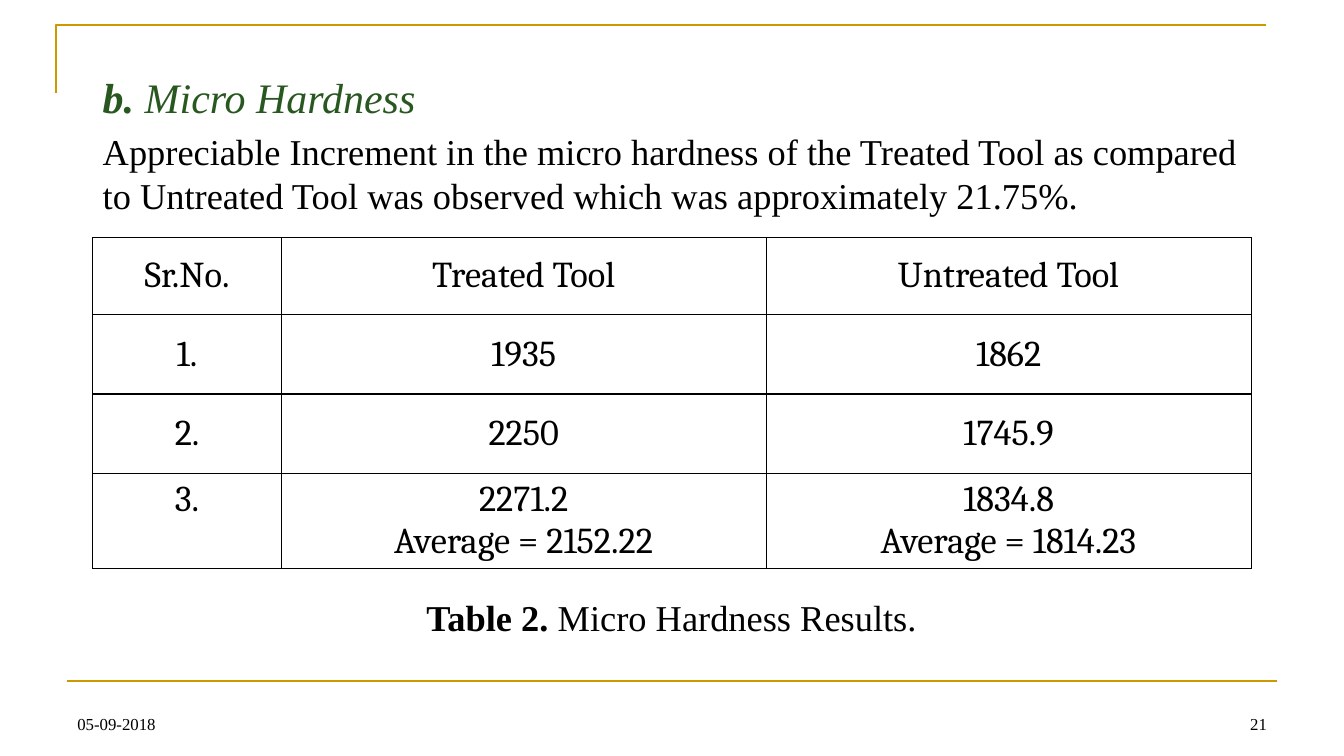
from dataclasses import dataclass

from lxml import etree
from pptx import Presentation
from pptx import util as u
from pptx.dml.color import RGBColor
from pptx.enum import shapes, text
from pptx.oxml import ns

GOLD = RGBColor(0xCC, 0x99, 0x00)
GREEN = RGBColor(0x28, 0x57, 0x20)
BLACK = RGBColor(0x00, 0x00, 0x00)
SERIF = "Times New Roman"
TABLE_FONT = "Cambria"
LEFT, CENTER, RIGHT = text.PP_ALIGN.LEFT, text.PP_ALIGN.CENTER, text.PP_ALIGN.RIGHT
TOP, MIDDLE, BOTTOM = text.MSO_ANCHOR.TOP, text.MSO_ANCHOR.MIDDLE, text.MSO_ANCHOR.BOTTOM

COLUMN_WIDTHS = (4.75, 12.22, 12.22)
ROW_HEIGHTS = (1.93, 2.01, 2.01, 2.39)
HARDNESS_ROWS = (
    ("Sr.No.", "Treated Tool", "Untreated Tool"),
    ("1.", "1935", "1862"),
    ("2.", "2250", "1745.9"),
    ("3.", "2271.2\nAverage = 2152.22", "1834.8\nAverage = 1814.23"),
)


@dataclass(frozen=True)
class Line:
    words: str
    size: float
    lead: str = ""
    color: RGBColor = BLACK
    italic: bool = False
    align: text.PP_ALIGN = LEFT
    space_before: float = 0


@dataclass(frozen=True)
class TextBlock:
    left: float
    top: float
    width: float
    height: float
    lines: tuple[Line, ...]
    anchor: text.MSO_ANCHOR = TOP
    wrap: bool = True


TEXT_BLOCKS = (
    TextBlock(2.34, 1.68, 29.21, 15.42, (
        Line("Micro Hardness", 30, "b. ", GREEN, italic=True, space_before=6),
        Line("Appreciable Increment in the micro hardness of the Treated Tool as compared "
             "to Untreated Tool was observed which was approximately 21.75%.",
             26, space_before=5.2),
    )),
    TextBlock(10.44, 14.86, 12.98, 1.37,
              (Line("Micro Hardness Results.", 26, "Table 2. ", align=CENTER),), wrap=False),
    TextBlock(1.7, 17.35, 7.9, 1.27, (Line("05-09-2018", 12),), BOTTOM),
    TextBlock(24.28, 17.35, 7.9, 1.27, (Line("21", 12, align=RIGHT),), BOTTOM),
)


def draw_frame(slide) -> None:
    builder = slide.shapes.build_freeform(u.Cm(1.42), u.Cm(2.34))
    builder.add_line_segments(
        [(u.Cm(1.42), u.Cm(0.63)), (u.Cm(31.9), u.Cm(0.63))], close=False)
    corner = builder.convert_to_shape()
    corner.fill.background()
    corner.shadow.inherit = False
    footer_rule = slide.shapes.add_connector(
        shapes.MSO_CONNECTOR.STRAIGHT, u.Cm(1.7), u.Cm(17.15), u.Cm(32.18), u.Cm(17.15))
    etree.SubElement(footer_rule._element.spPr, ns.qn("a:effectLst"))
    for outline in (corner.line, footer_rule.line):
        outline.color.rgb = GOLD
        outline.width = u.Pt(1.5)


def write_line(paragraph, line: Line) -> None:
    paragraph.alignment = line.align
    paragraph.space_before = u.Pt(line.space_before)
    font = paragraph.font
    font.name, font.size, font.italic = SERIF, u.Pt(line.size), line.italic
    font.color.rgb = line.color
    if line.lead:
        lead = paragraph.add_run()
        lead.text = line.lead
        lead.font.bold = True
    paragraph.add_run().text = line.words


def draw_text(slide, block: TextBlock) -> None:
    box = slide.shapes.add_textbox(
        u.Cm(block.left), u.Cm(block.top), u.Cm(block.width), u.Cm(block.height))
    frame = box.text_frame
    frame.word_wrap = block.wrap
    frame.vertical_anchor = block.anchor
    for index, line in enumerate(block.lines):
        write_line(frame.add_paragraph() if index else frame.paragraphs[0], line)


def add_borders(cell) -> None:
    properties = cell._tc.get_or_add_tcPr()
    for side in ("a:lnL", "a:lnR", "a:lnT", "a:lnB"):
        border = etree.SubElement(properties, ns.qn(side), w=str(u.Pt(1)))
        fill = etree.SubElement(border, ns.qn("a:solidFill"))
        etree.SubElement(fill, ns.qn("a:srgbClr"), val=str(BLACK))


def fill_cell(cell, words: str, is_last_row: bool) -> None:
    add_borders(cell)
    cell.fill.background()
    cell.margin_left = cell.margin_right = u.Cm(0.18)
    cell.margin_top = u.Cm(0.12 if is_last_row else 0)
    cell.margin_bottom = 0
    cell.vertical_anchor = TOP if is_last_row else MIDDLE
    cell.text = words
    for paragraph in cell.text_frame.paragraphs:
        paragraph.alignment = CENTER
        paragraph.font.name, paragraph.font.size = TABLE_FONT, u.Pt(26)
        paragraph.font.color.rgb = BLACK


def draw_table(slide) -> None:
    table = slide.shapes.add_table(
        len(ROW_HEIGHTS), len(COLUMN_WIDTHS), u.Cm(2.34), u.Cm(5.99),
        u.Cm(sum(COLUMN_WIDTHS)), u.Cm(sum(ROW_HEIGHTS))).table
    table.first_row = table.horz_banding = False
    for column, width in zip(table.columns, COLUMN_WIDTHS):
        column.width = u.Cm(width)
    for row, height, values in zip(table.rows, ROW_HEIGHTS, HARDNESS_ROWS):
        row.height = u.Cm(height)
        for cell, words in zip(row.cells, values):
            fill_cell(cell, words, values is HARDNESS_ROWS[-1])


def main() -> None:
    presentation = Presentation()
    presentation.slide_width, presentation.slide_height = u.Cm(33.87), u.Cm(19.05)
    slide = presentation.slides.add_slide(presentation.slide_layouts[6])
    draw_frame(slide)
    for block in TEXT_BLOCKS:
        draw_text(slide, block)
    draw_table(slide)
    presentation.save("out.pptx")


if __name__ == "__main__":
    main()
